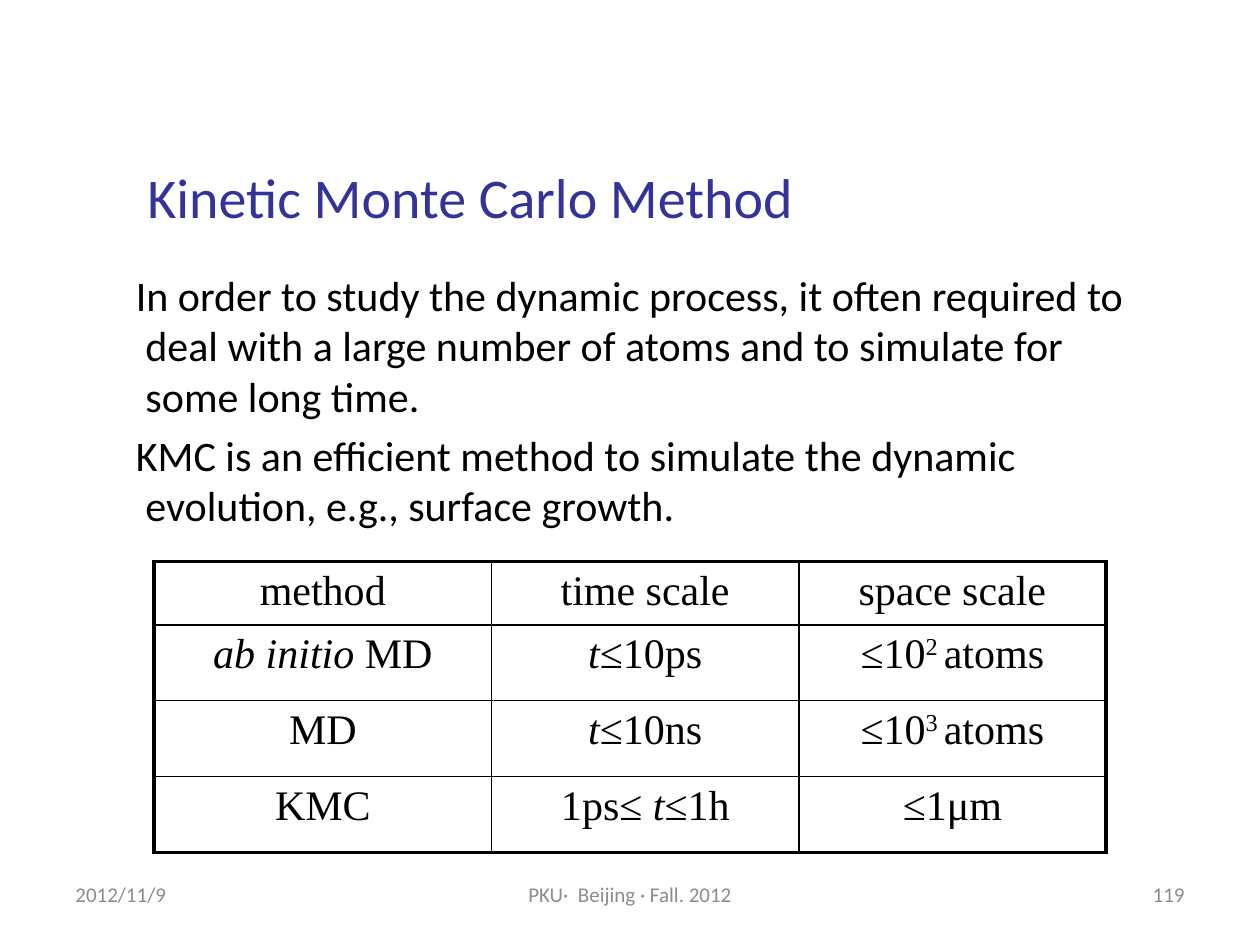
from lxml import etree
from pptx import Presentation
from pptx import util as u
from pptx.dml.color import RGBColor
from pptx.enum import text
from pptx.oxml import ns

BLACK = RGBColor(0, 0, 0)
INDIGO = RGBColor(0x33, 0x33, 0x99)
GREY = RGBColor(0x8C, 0x8C, 0x8C)
LEFT, CENTER, RIGHT = (text.PP_ALIGN.LEFT, text.PP_ALIGN.CENTER,
                       text.PP_ALIGN.RIGHT)
MIDDLE = text.MSO_ANCHOR.MIDDLE

TITLE = {"name": "Calibri", "size": u.Pt(32), "color": INDIGO}
BODY = {"name": "Calibri", "size": u.Pt(24), "color": BLACK}
CELL = {"name": "Times New Roman", "size": u.Pt(24), "color": BLACK}
FOOTER = {"name": "Calibri", "size": u.Pt(12), "color": GREY}
ITALIC = {"italic": True}
SUPER = {"baseline": 30}

THIN, THICK = 1, 2.25


def points(*lengths):
    return [u.Pt(length) for length in lengths]


class SlideBuilder:
    def __init__(self, deck):
        self.page = deck.slides.add_slide(deck.slide_layouts[5])

    def add_spans(self, para, spans, style, align=LEFT):
        """Fill a paragraph with (words, extra format) pairs."""
        para.alignment = align
        for words, extra in spans:
            span = para.add_run()
            span.text = words
            for key, value in {**style, **extra}.items():
                if key == "color":
                    span.font.color.rgb = value
                elif key == "baseline":
                    span._r.get_or_add_rPr().set(key, str(value * 1000))
                else:
                    setattr(span.font, key, value)

    def title(self, words, area):
        box = self.page.shapes.title
        box.left, box.top, box.width, box.height = points(*area)
        box.text_frame.vertical_anchor = MIDDLE
        self.add_spans(box.text_frame.paragraphs[0], [(words, {})], TITLE)

    def text_box(self, lines, area, style, align=LEFT, anchor=None,
                 hanging=None):
        """Add a wrapped box; hanging is (left margin, first-line indent, space before)."""
        frame = self.page.shapes.add_textbox(*points(*area)).text_frame
        frame.word_wrap = True
        frame.vertical_anchor = anchor
        for index, line in enumerate(lines):
            para = frame.add_paragraph() if index else frame.paragraphs[0]
            self.add_spans(para, [(line, {})], style, align)
            if hanging:
                margin, indent, before = points(*hanging)
                props = para._p.get_or_add_pPr()
                props.set("marL", str(margin))
                props.set("indent", str(indent))
                para.space_before = before

    def border(self, cell, side, width):
        props = cell._tc.get_or_add_tcPr()
        line = etree.SubElement(props, ns.qn(f"a:ln{side}"), w=str(u.Pt(width)))
        fill = etree.SubElement(line, ns.qn("a:solidFill"))
        etree.SubElement(fill, ns.qn("a:srgbClr"), val=str(BLACK))

    def table(self, rows, corner, widths, heights):
        """Add a table with a thick outline and thin inner lines."""
        size = (sum(widths), sum(heights))
        grid = self.page.shapes.add_table(
            len(rows), len(widths), *points(*corner, *size)).table
        grid.first_row = grid.horz_banding = False
        for column, width in zip(grid.columns, widths):
            column.width = u.Pt(width)
        for row, height in zip(grid.rows, heights):
            row.height = u.Pt(height)
        for r, row in enumerate(rows):
            for c, spans in enumerate(row):
                cell = grid.cell(r, c)
                self.add_spans(cell.text_frame.paragraphs[0], spans, CELL,
                               CENTER)
                outer = {"L": c == 0, "R": c == len(widths) - 1,
                         "T": r == 0, "B": r == len(rows) - 1}
                for side, is_outer in outer.items():
                    self.border(cell, side, THICK if is_outer else THIN)
                cell.fill.background()


def main():
    deck = Presentation()
    deck.slide_width, deck.slide_height = points(720, 540)
    slide = SlideBuilder(deck)

    slide.title("Kinetic Monte Carlo Method", (77, 67, 612, 90))
    slide.text_box(
        ["In order to study the dynamic process, it often required to deal "
         "with a large number of atoms and to simulate for some long time.",
         "KMC is an efficient method to simulate the dynamic evolution, "
         "e.g., surface growth."],
        (49, 150.5, 605.5, 324), BODY, hanging=(27, -5.5, 4.8))

    def plain(words):
        return [(words, {})]

    def atoms(power):
        return [("≤10", {}), (f"{power} ", SUPER), ("atoms", {})]

    def time_below(limit):
        return [("t", ITALIC), (f"≤{limit}", {})]

    slide.table(
        [[plain("method"), plain("time scale"), plain("space scale")],
         [[("ab initio", ITALIC), (" MD", {})], time_below("10ps"), atoms(2)],
         [plain("MD"), time_below("10ns"), atoms(3)],
         [plain("KMC"), plain("1ps≤ ") + time_below("1h"), plain("≤1μm")]],
        (88, 321), (193, 175.5, 175.5), (34, 43.4, 43.4, 43.4))

    for words, left, width, align in (
            ("2012/11/9", 36, 168, LEFT),
            ("PKU·  Beijing · Fall. 2012", 246, 228, CENTER),
            ("119", 516, 168, RIGHT)):
        slide.text_box([words], (left, 492, width, 37.5), FOOTER, align, MIDDLE)

    deck.save("out.pptx")


if __name__ == "__main__":
    main()
